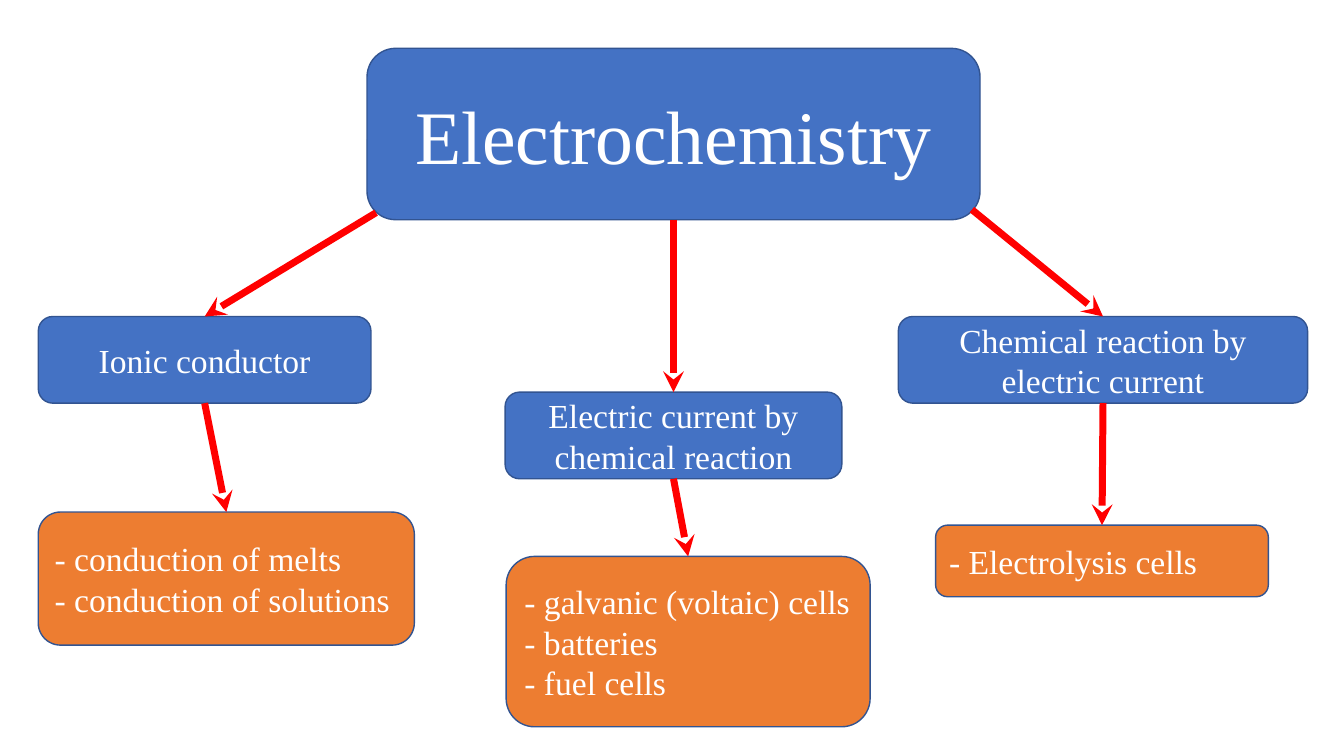
import pptx
import pptx.dml.color
import pptx.enum.shapes
import pptx.enum.text
import pptx.oxml
import pptx.oxml.ns
import pptx.util

PX = 9144
COLORS = {"blue": "4472C4", "orange": "ED7D31", "outline": "325491", "arrow": "FF0000", "text": "FFFFFF"}
TOP, BOTTOM = 0, 2


def rgb(name):
    return pptx.dml.color.RGBColor.from_string(COLORS[name])


presentation = pptx.Presentation()
presentation.slide_width = 1333 * PX
presentation.slide_height = 750 * PX
slide = presentation.slides.add_slide(presentation.slide_layouts[6])

boxes = [
    ("title", (364, 48, 608, 170), "blue", 54, ["Electrochemistry"]),
    ("ionic", (38, 314, 330, 86), "blue", 24, ["Ionic conductor"]),
    ("current", (501, 389, 334, 86), "blue", 24, ["Electric current by chemical reaction"]),
    ("reaction", (891, 314, 406, 86), "blue", 24, ["Chemical reaction by electric current"]),
    ("conduction", (38, 508, 373, 132), "orange", 24, ["- conduction of melts", "- conduction of solutions"]),
    ("cells", (502, 552, 361, 169), "orange", 24, ["- galvanic (voltaic) cells", "- batteries", "- fuel cells"]),
    ("electrolysis", (928, 521, 330, 71), "orange", 24, ["- Electrolysis cells"]),
]
shapes = {}
for name, bounds, fill, size, lines in boxes:
    shape = slide.shapes.add_shape(
        pptx.enum.shapes.MSO_SHAPE.ROUNDED_RECTANGLE, *[length * PX for length in bounds])
    shape.shadow.inherit = False
    shape.fill.solid()
    shape.fill.fore_color.rgb = rgb(fill)
    shape.line.color.rgb = rgb("outline")
    shape.line.width = pptx.util.Pt(1)
    frame = shape.text_frame
    frame.word_wrap = True
    frame.vertical_anchor = pptx.enum.text.MSO_ANCHOR.MIDDLE
    alignment = pptx.enum.text.PP_ALIGN.CENTER
    if fill == "orange":
        alignment = pptx.enum.text.PP_ALIGN.LEFT
        frame.margin_right = 0
    frame.text = "\n".join(lines)
    for paragraph in frame.paragraphs:
        paragraph.alignment = alignment
        paragraph.font.name = "Times New Roman"
        paragraph.font.size = pptx.util.Pt(size)
        paragraph.font.color.rgb = rgb("text")
    shapes[name] = shape

arrows = [
    ("title", "ionic", (373, 211)),
    ("title", "current", None),
    ("title", "reaction", (964, 208)),
    ("ionic", "conduction", None),
    ("current", "cells", None),
    ("reaction", "electrolysis", None),
]
for source, target, corner in arrows:
    start, end = shapes[source], shapes[target]
    if corner:
        start_x, start_y = [length * PX for length in corner]
    else:
        start_x, start_y = start.left + start.width // 2, start.top + start.height
    connector = slide.shapes.add_connector(
        pptx.enum.shapes.MSO_CONNECTOR.STRAIGHT,
        start_x, start_y, end.left + end.width // 2, end.top)
    if not corner:
        connector.begin_connect(start, BOTTOM)
    connector.end_connect(end, TOP)
    connector.line.color.rgb = rgb("arrow")
    connector.line.width = pptx.util.Pt(5)
    line = connector.line._get_or_add_ln()
    line.append(pptx.oxml.parse_xml(
        f'<a:tailEnd {pptx.oxml.ns.nsdecls("a")} type="stealth"/>'))
    line.addnext(pptx.oxml.parse_xml(f'<a:effectLst {pptx.oxml.ns.nsdecls("a")}/>'))

presentation.save("out.pptx")
